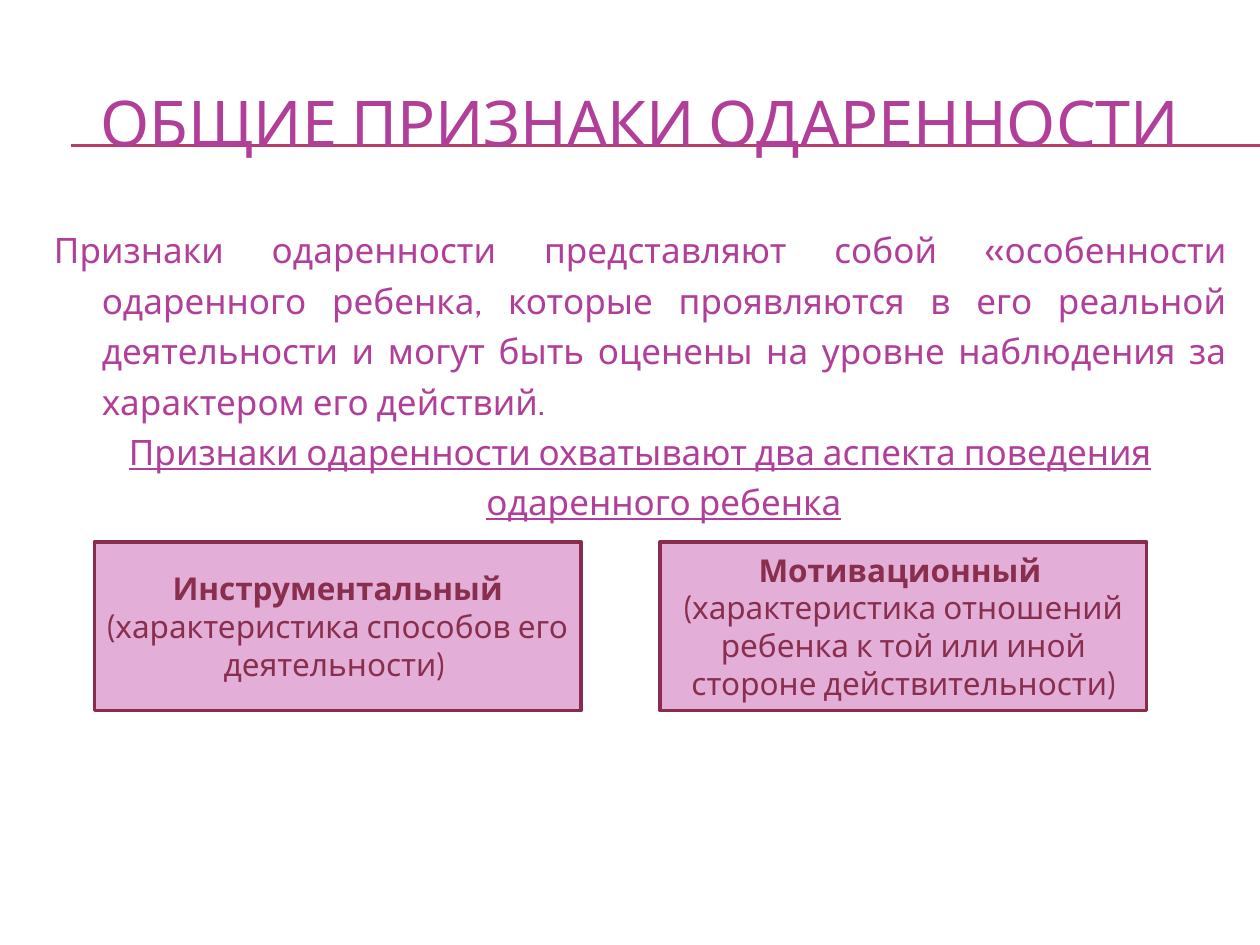
from lxml import etree
from pptx import Presentation
from pptx.dml.color import RGBColor
from pptx.enum.shapes import MSO_CONNECTOR, MSO_SHAPE
from pptx.enum.text import MSO_ANCHOR, PP_ALIGN
from pptx.oxml.ns import qn
from pptx.util import Pt

CENTER, FULL = PP_ALIGN.CENTER, PP_ALIGN.JUSTIFY
TOP, MIDDLE = MSO_ANCHOR.TOP, MSO_ANCHOR.MIDDLE
RECT, STRAIGHT = MSO_SHAPE.RECTANGLE, MSO_CONNECTOR.STRAIGHT

FONT = "Cabin"
COLORS = {"text": "B13F9A", "rule": "B83D68", "fill": "E3AFD8",
          "edge": "882D4D", "label": "8A2E4E"}

TITLE = "ОБЩИЕ ПРИЗНАКИ ОДАРЕННОСТИ"
BODY = [
    ("Признаки одаренности представляют собой «особенности одаренного "
     "ребенка, которые проявляются в его реальной деятельности и могут быть "
     "оценены на уровне наблюдения за характером его действий.", FULL, False),
    ("Признаки одаренности охватывают два аспекта поведения "
     "одаренного ребенка", CENTER, True),
]
CARDS = [
    [[("Инструментальный ", True),
      ("(характеристика способов его деятельности) ", False)]],
    [[("Мотивационный ", True)],
     [("(характеристика отношений ребенка к той или иной "
       "стороне действительности)", False)]],
]

WIDE, HIGH = 720, 540
LEFT, SPAN = 23.76, 684
RULES = (82.8, 83.5)
RULE_X = 40.5
CARD_X, CARD_Y, CARD_W, CARD_H, STEP = 54, 309.6, 278, 96.5, 323.3
HANG = 27.36


def color(name):
    return RGBColor.from_string(COLORS[name])


def write(par, text, size=20, tint="text", bold=False, under=False,
          align=CENTER):
    par.alignment = align
    run = par.add_run()
    run.text = text
    font = run.font
    font.name, font.size = FONT, Pt(size)
    font.bold, font.underline = bold, under
    font.color.rgb = color(tint)


def setup(shape, anchor):
    frame = shape.text_frame
    frame.word_wrap = True
    frame.vertical_anchor = anchor
    return frame


def next_par(frame, num):
    return frame.add_paragraph() if num else frame.paragraphs[0]


def add_box(slide, top, high, anchor):
    box = slide.shapes.add_textbox(Pt(LEFT), Pt(top), Pt(SPAN), Pt(high))
    return setup(box, anchor)


def add_rule(slide, y):
    line = slide.shapes.add_connector(STRAIGHT, Pt(RULE_X), Pt(y),
                                      Pt(WIDE), Pt(y))
    line.line.color.rgb = color("rule")
    line.line.width = Pt(0.75)
    etree.SubElement(line._element.spPr, qn("a:effectLst"))


def add_card(slide, num, rows):
    card = slide.shapes.add_shape(RECT, Pt(CARD_X + num * STEP), Pt(CARD_Y),
                                  Pt(CARD_W), Pt(CARD_H))
    card.shadow.inherit = False
    card.fill.solid()
    card.fill.fore_color.rgb = color("fill")
    card.line.color.rgb = color("edge")
    card.line.width = Pt(2)
    frame = setup(card, MIDDLE)
    for row, runs in enumerate(rows):
        par = next_par(frame, row)
        for text, bold in runs:
            write(par, text, size=18, tint="label", bold=bold)


def main():
    deck = Presentation()
    deck.slide_width, deck.slide_height = Pt(WIDE), Pt(HIGH)
    slide = deck.slides.add_slide(deck.slide_layouts[6])
    for y in RULES:
        add_rule(slide, y)
    write(add_box(slide, 36, 66.24, MIDDLE).paragraphs[0], TITLE, size=36)
    frame = add_box(slide, 122.4, 356.4, TOP)
    for num, (text, align, under) in enumerate(BODY):
        par = next_par(frame, num)
        write(par, text, align=align, under=under)
        par.line_spacing = 1.2
        props = par._p.get_or_add_pPr()
        props.set("marL", str(Pt(HANG)))
        props.set("indent", str(-Pt(HANG)))
    for num, rows in enumerate(CARDS):
        add_card(slide, num, rows)
    deck.save("out.pptx")


if __name__ == "__main__":
    main()
